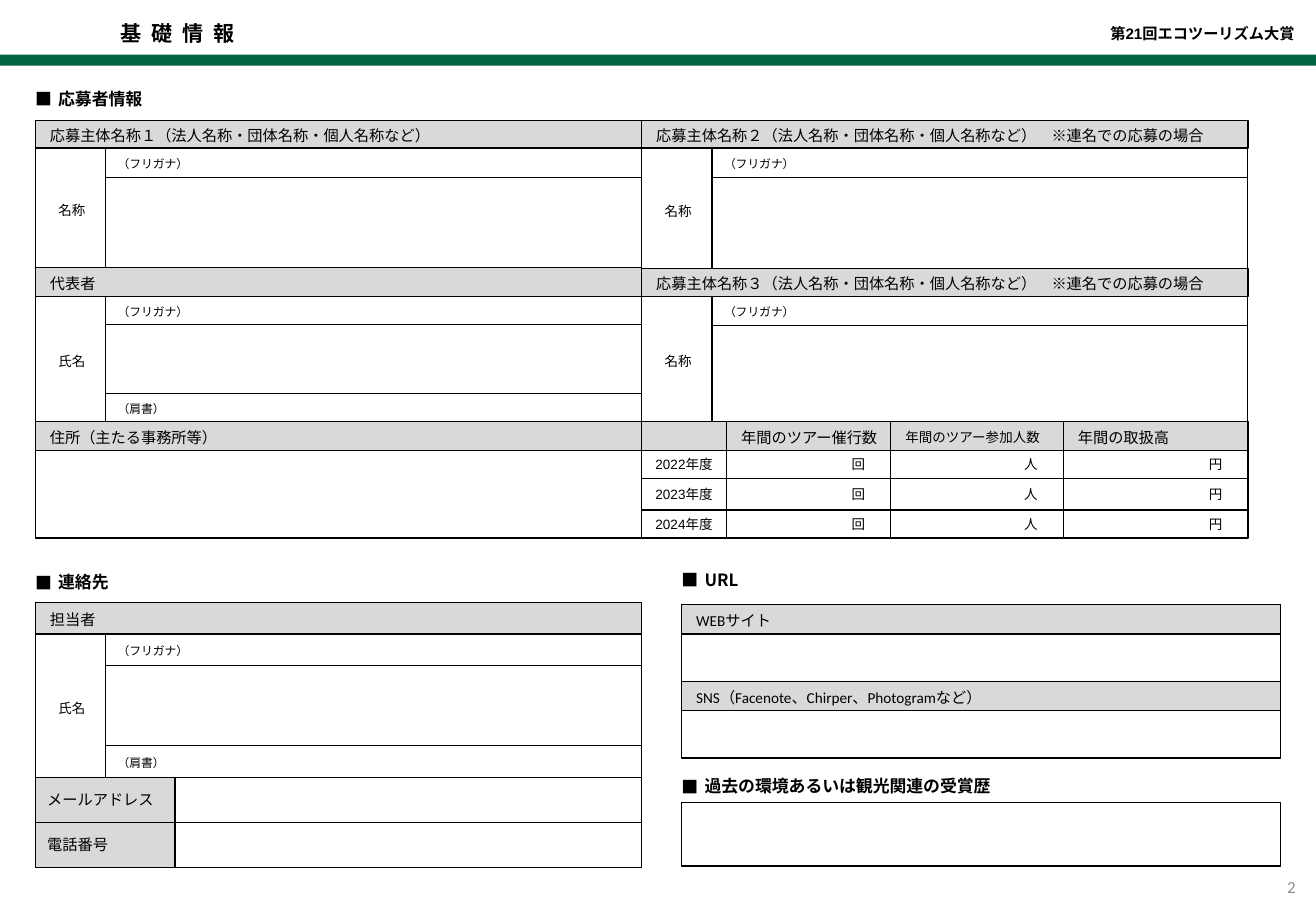
from lxml import etree
from pptx import Presentation
from pptx.dml.color import RGBColor
from pptx.enum import lang, shapes, text
from pptx.oxml import ns
from pptx.util import Inches, Pt

COLORS = {"green": "006442", "black": "000000", "white": "FFFFFF",
          "header": "D9D9D9", "page": "8C8C8C"}
JAPANESE_FONT = "Noto Sans CJK JP"
LEFT, CENTER, RIGHT = text.PP_ALIGN.LEFT, text.PP_ALIGN.CENTER, text.PP_ALIGN.RIGHT
MIDDLE, BOTTOM = text.MSO_ANCHOR.MIDDLE, text.MSO_ANCHOR.BOTTOM

# kind of cell: fill, size, font, alignment, insets (left, top, right, bottom)
CELLS = {
    "header": ("header", 9, "Calibri", LEFT, (0.12, 0.1, 0.05, 0.08)),
    "small header": ("header", 8, "Calibri", LEFT, (0.12, 0.1, 0.05, 0.08)),
    "contact": ("header", 9, "Arial", LEFT, (0.1, 0.08, 0.05, 0.08)),
    "label": ("white", 8, "Calibri", CENTER, (0.12, 0.12, 0.1, 0.08)),
    "hint": ("white", 7, "Arial", LEFT, (0.1, 0.1, 0.1, 0.08)),
    "year": ("white", 8, "Arial", CENTER, (0.05, 0.08, 0.05, 0.08)),
    "unit": ("white", 8, "Arial", RIGHT, (0.1, 0.08, 0.21, 0.08)),
}

presentation = Presentation()
presentation.slide_width, presentation.slide_height = Inches(10.83), Inches(7.5)
slide = presentation.slides.add_slide(presentation.slide_layouts[6])


def write(shape, words, size, font, align, anchor, color="black", bold=False, bullet=False):
    """Put one formatted paragraph in the shape and return its run."""
    frame = shape.text_frame
    frame.text = words
    frame.vertical_anchor = anchor
    paragraph = frame.paragraphs[0]
    paragraph.alignment = align
    if bullet:
        properties = paragraph._p.get_or_add_pPr()
        properties.set("marL", str(Inches(0.19)))
        properties.set("indent", str(-Inches(0.19)))
        etree.SubElement(properties, ns.qn("a:buFont"), typeface=JAPANESE_FONT)
        etree.SubElement(properties, ns.qn("a:buChar"), char="■")
    run = paragraph.runs[0]
    run.font.size, run.font.bold, run.font.name = Pt(size), bold, font
    run.font.color.rgb = RGBColor.from_string(COLORS[color])
    run.font.language_id = lang.MSO_LANGUAGE_ID.JAPANESE
    latin = run.font._element.find(ns.qn("a:latin"))
    latin.addnext(etree.Element(ns.qn("a:ea"), typeface=JAPANESE_FONT))
    return run


def cell(left, top, right, bottom, kind="hint", words=""):
    """Draw one form cell between the given edges."""
    fill, size, font, align, insets = CELLS[kind]
    shape = slide.shapes.add_shape(
        shapes.MSO_SHAPE.RECTANGLE, Inches(left), Inches(top),
        Inches(right - left), Inches(bottom - top))
    shape.shadow.inherit = False
    shape.fill.solid()
    shape.fill.fore_color.rgb = RGBColor.from_string(COLORS[fill])
    shape.line.color.rgb = RGBColor.from_string(COLORS["black"])
    shape.line.width = Pt(0.75)
    if words:
        frame = shape.text_frame
        frame.word_wrap = True
        frame.margin_left, frame.margin_top, frame.margin_right, frame.margin_bottom = map(Inches, insets)
        write(shape, words, size, font, align, MIDDLE)


# Top band, title and page number
bar = slide.shapes.add_shape(shapes.MSO_SHAPE.RECTANGLE, 0, Inches(0.45),
                             presentation.slide_width, Inches(0.09))
bar.shadow.inherit = False
bar.fill.solid()
bar.fill.fore_color.rgb = RGBColor.from_string(COLORS["green"])
bar.line.fill.background()

title = slide.shapes.add_textbox(Inches(0.89), Inches(0.16), Inches(4.53), Inches(0.27))
title.text_frame.word_wrap = True
title_run = write(title, "基礎情報", 12.5, "Arial", LEFT, BOTTOM, bold=True)
title_run.font._element.set("spc", "600")

award = slide.shapes.add_textbox(Inches(8.55), Inches(0.15), Inches(2.2), Inches(0.27))
award.text_frame.word_wrap = True
award.text_frame.margin_top = award.text_frame.margin_bottom = Inches(0.08)
write(award, "第21回エコツーリズム大賞", 9, "Arial", RIGHT, BOTTOM, bold=True)

for box in (title, award):
    box.text_frame.paragraphs[0].line_spacing = 0.9

page_number = slide.shapes.add_textbox(Inches(10.13), Inches(7.1), Inches(0.63), Inches(0.4))
page_number.text_frame.word_wrap = True
write(page_number, "2", 10, "Calibri", RIGHT, MIDDLE, color="page")

# Section headings
for left, top, width, height, words, font in (
    (0.19, 0.68, 1.09, 0.27, "応募者情報", "Arial"),
    (0.19, 4.66, 0.81, 0.27, "連絡先", "Arial"),
    (5.51, 4.64, 0.76, 0.31, "URL", JAPANESE_FONT),
    (5.51, 6.34, 2.78, 0.27, "過去の環境あるいは観光関連の受賞歴", "Arial"),
):
    heading = slide.shapes.add_textbox(Inches(left), Inches(top), Inches(width), Inches(height))
    heading.text_frame.word_wrap = False
    heading.text_frame.auto_size = text.MSO_AUTO_SIZE.SHAPE_TO_FIT_TEXT
    write(heading, words, 10, font, LEFT, text.MSO_ANCHOR.TOP, bold=True, bullet=True)

# Name panels: a header, a label on the left, and rows between the given edges
FORM_LEFT, FORM_MIDDLE, FORM_RIGHT = 0.29, 5.28, 10.27
LABEL_WIDTH = 0.58
for left, right, header, label, edges in (
    (FORM_LEFT, FORM_MIDDLE, "応募主体名称１（法人名称・団体名称・個人名称など）", "名称",
     (0.99, 1.22, 1.46, 2.2)),
    (FORM_LEFT, FORM_MIDDLE, "代表者", "氏名", (2.2, 2.44, 2.67, 3.24, 3.47)),
    (FORM_MIDDLE, FORM_RIGHT, "応募主体名称２（法人名称・団体名称・個人名称など）　※連名での応募の場合", "名称",
     (0.99, 1.22, 1.46, 2.21)),
    (FORM_MIDDLE, FORM_RIGHT, "応募主体名称３（法人名称・団体名称・個人名称など）　※連名での応募の場合", "名称",
     (2.21, 2.44, 2.68, 3.47)),
    (FORM_LEFT, FORM_MIDDLE, "担当者", "氏名", (4.96, 5.22, 5.48, 6.14, 6.4)),
):
    cell(left, edges[0], right, edges[1], "header", header)
    cell(left, edges[1], left + LABEL_WIDTH, edges[-1], "label", label)
    for top, bottom, hint in zip(edges[1:], edges[2:], ("（フリガナ）", "", "（肩書）")):
        cell(left + LABEL_WIDTH, top, right, bottom, "hint", hint)

# Address
cell(FORM_LEFT, 3.47, FORM_MIDDLE, 3.71, "header", "住所（主たる事務所等）")
cell(FORM_LEFT, 3.71, FORM_MIDDLE, 4.43, "hint")

# Yearly tour figures
YEAR_RIGHT = 5.98
YEAR_EDGES = (3.71, 3.94, 4.2, 4.43)
cell(FORM_MIDDLE, 3.47, YEAR_RIGHT, 3.71, "header")
for left, right, kind, header, unit in (
    (YEAR_RIGHT, 7.33, "header", "年間のツアー催行数", "回"),
    (7.33, 8.75, "small header", "年間のツアー参加人数", "人"),
    (8.75, FORM_RIGHT, "header", "年間の取扱高", "円"),
):
    cell(left, 3.47, right, 3.71, kind, header)
    for top, bottom in zip(YEAR_EDGES, YEAR_EDGES[1:]):
        cell(left, top, right, bottom, "unit", unit)
for year, top, bottom in zip((2022, 2023, 2024), YEAR_EDGES, YEAR_EDGES[1:]):
    cell(FORM_MIDDLE, top, YEAR_RIGHT, bottom, "year", f"{year}年度")

# Contact details
for top, words in ((6.4, "メールアドレス"), (6.77, "電話番号")):
    cell(FORM_LEFT, top, 1.44, top + 0.37, "contact", words)
    cell(1.44, top, FORM_MIDDLE, top + 0.37)

# Web addresses and past awards
URL_LEFT, URL_RIGHT = 5.61, 10.54
for top, words in ((4.98, "WEBサイト"), (5.61, "SNS（Facenote、Chirper、Photogramなど）")):
    cell(URL_LEFT, top, URL_RIGHT, top + 0.24, "header", words)
    cell(URL_LEFT, top + 0.24, URL_RIGHT, top + 0.63)
cell(URL_LEFT, 6.61, URL_RIGHT, 7.13)

presentation.save("out.pptx")
